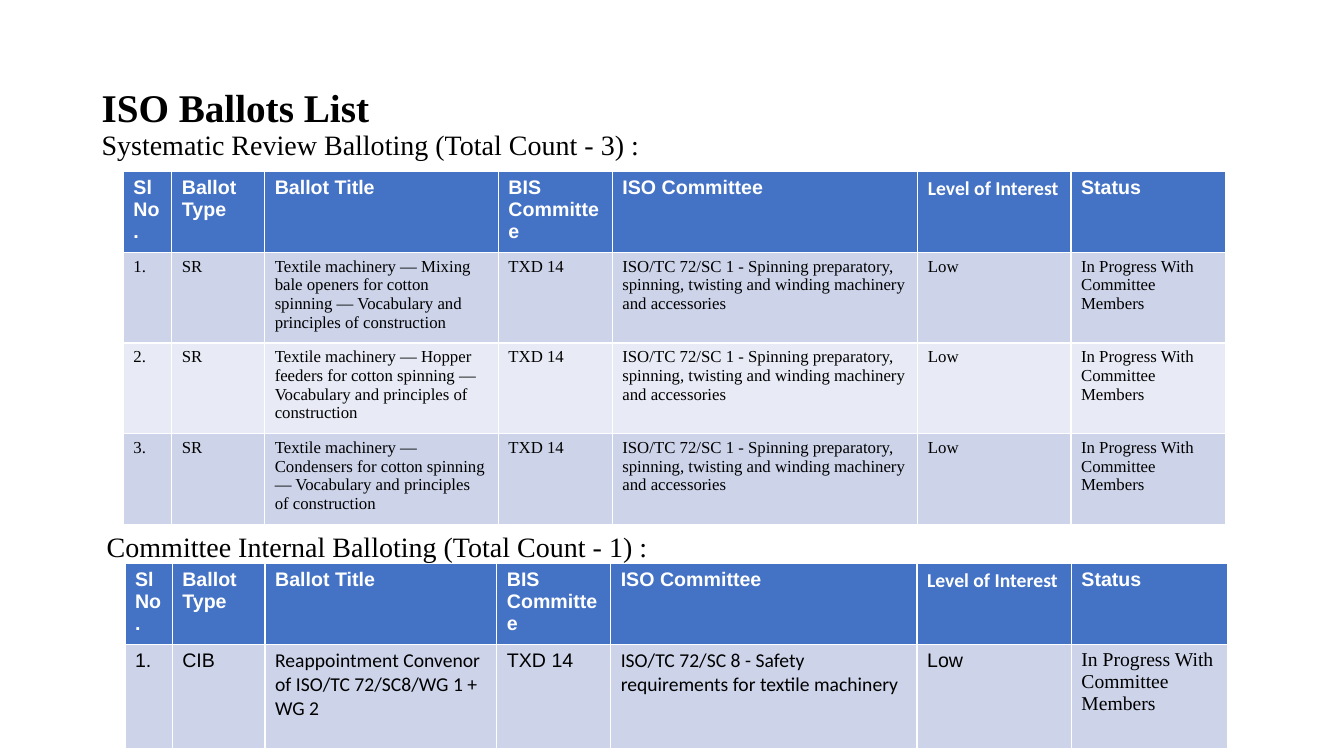
from collections import namedtuple
from dataclasses import dataclass

from pptx import Presentation
from pptx.dml.color import RGBColor
from pptx.enum.text import MSO_ANCHOR
from pptx.util import Cm, Pt

Box = namedtuple("Box", "left top width height")


@dataclass(frozen=True)
class Theme:
    """Colours, faces and type sizes of the slide."""
    ink: str = "000000"
    white: str = "FFFFFF"
    head: str = "4472C4"
    bands: tuple = ("CDD4EA", "E8EBF5")
    serif: str = "Times New Roman"
    sans: str = "Arial"
    plain: str = "Calibri"
    title: int = 28
    label: int = 20
    table: int = 14
    small: int = 12


THEME = Theme()
HEADS = ("Sl No.", "Ballot Type", "Ballot Title", "BIS Committee",
         "ISO Committee", "Level of Interest", "Status")
HEAD_FACES = (THEME.sans,) * 5 + (THEME.plain, THEME.sans)
STATUS = "In Progress With Committee Members"
SPINNING = ("ISO/TC 72/SC 1 - Spinning preparatory, spinning, "
            "twisting and winding machinery and accessories")
TOPICS = (
    "Mixing bale openers for cotton spinning — Vocabulary and principles of construction",
    "Hopper feeders for cotton spinning — Vocabulary and principles of construction",
    "Condensers for cotton spinning — Vocabulary and principles of construction",
)
REVIEWS = [(f"{count}.", "SR", f"Textile machinery — {topic}", "TXD 14",
            SPINNING, "Low", STATUS)
           for count, topic in enumerate(TOPICS, 1)]
INTERNAL = [("1.", "CIB", "Reappointment Convenor of ISO/TC 72/SC8/WG 1 + WG 2",
             "TXD 14", "ISO/TC 72/SC 8 - Safety requirements for textile machinery",
             "Low", STATUS)]
INTERNAL_FACES = (THEME.sans, THEME.sans, THEME.plain, THEME.sans,
                  THEME.plain, THEME.sans, THEME.serif)


def style(font, face, size, color, bold=False):
    """Set face, size, colour and weight of a font."""
    font.name, font.size, font.bold = face, Pt(size), bold
    font.color.rgb = RGBColor.from_string(color)


def add_text(slide, box, lines, anchor=MSO_ANCHOR.TOP, spacing=1.0):
    """Place a text box with lines of (text, size, bold)."""
    frame = slide.shapes.add_textbox(*map(Cm, box)).text_frame
    frame.word_wrap = True
    frame.vertical_anchor = anchor
    for index, (text, size, bold) in enumerate(lines):
        para = frame.add_paragraph() if index else frame.paragraphs[0]
        para.text = text
        para.line_spacing = spacing
        style(para.font, THEME.serif, size, THEME.ink, bold)


def fill_row(cells, texts, faces, size, color, fill, bold=False):
    """Write one table row in a single band colour."""
    for cell, text, face in zip(cells, texts, faces):
        cell.text = text
        cell.fill.solid()
        cell.fill.fore_color.rgb = RGBColor.from_string(fill)
        style(cell.text_frame.paragraphs[0].font, face, size, color, bold)


def add_ballots(slide, box, widths, head, rows, faces, size):
    """Place a ballot table with a header of given height and equal rows."""
    table = slide.shapes.add_table(len(rows) + 1, len(HEADS), *map(Cm, box)).table
    for column, width in zip(table.columns, widths):
        column.width = Cm(width)
    for index, row in enumerate(table.rows):
        row.height = Cm((box.height - head) / len(rows) if index else head)
    first, *rest = table.rows
    fill_row(first.cells, HEADS, HEAD_FACES, THEME.table, THEME.white, THEME.head, True)
    for index, (row, texts) in enumerate(zip(rest, rows)):
        fill_row(row.cells, texts, faces, size, THEME.ink, THEME.bands[index % 2])


def build(slide):
    """Lay out both ballot lists."""
    add_text(slide, Box(2.31, 0.69, 29.21, 3.51),
             [("ISO Ballots List", THEME.title, True),
              ("Systematic Review Balloting (Total Count - 3) :", THEME.label, False)],
             MSO_ANCHOR.BOTTOM, 0.9)
    add_ballots(slide, Box(3.11, 4.32, 27.77, 8.3),
                (1.22, 2.34, 5.89, 2.87, 7.7, 3.86, 3.89), 1.88,
                REVIEWS, (THEME.serif,) * len(HEADS), THEME.small)
    add_text(slide, Box(2.44, 13.21, 23.14, 1.12),
             [("Committee Internal Balloting (Total Count - 1) :", THEME.label, False)])
    add_ballots(slide, Box(3.15, 14.2, 27.79, 4.65),
                (1.19, 2.34, 5.84, 2.87, 7.72, 3.89, 3.94), 2.02,
                INTERNAL, INTERNAL_FACES, THEME.table)


def main():
    """Create and save the presentation."""
    deck = Presentation()
    deck.slide_width, deck.slide_height = Cm(33.87), Cm(19.05)
    build(deck.slides.add_slide(deck.slide_layouts[6]))
    deck.save("out.pptx")


if __name__ == "__main__":
    main()
